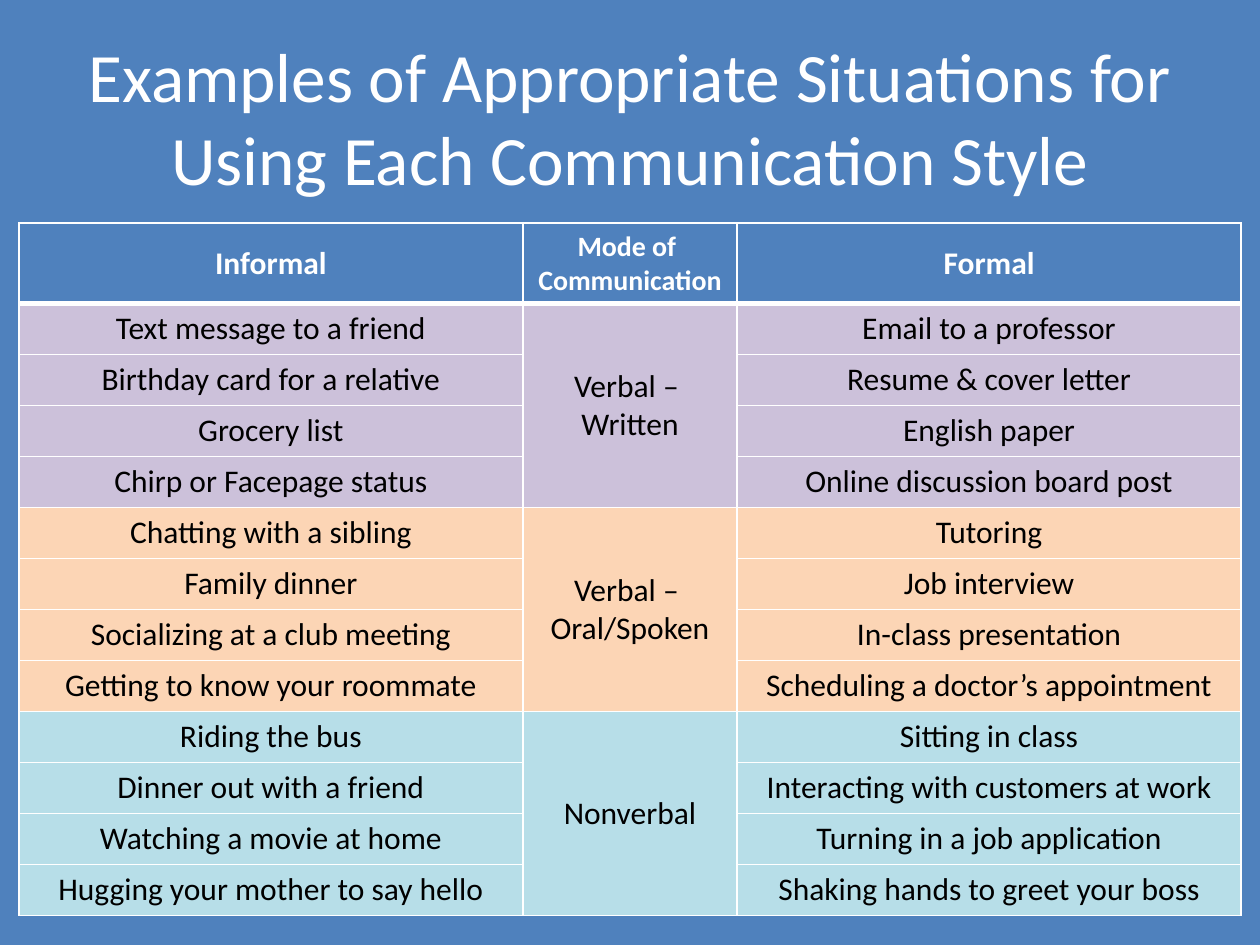
import copy
from dataclasses import dataclass

import pptx
import pptx.dml.color
import pptx.enum.text
import pptx.oxml
import pptx.oxml.ns
import pptx.util
from lxml import etree

RGBColor = pptx.dml.color.RGBColor
BLUE = RGBColor(0x4F, 0x81, 0xBD)
WHITE = RGBColor(0xFF, 0xFF, 0xFF)
BLACK = RGBColor(0x00, 0x00, 0x00)
LAVENDER = RGBColor(0xCC, 0xC1, 0xDA)
PEACH = RGBColor(0xFC, 0xD5, 0xB5)
AQUA = RGBColor(0xB7, 0xDE, 0xE8)

# Slide size and table grid, in inches
WIDTH, HEIGHT = 10, 7.5
COLUMNS = (4, 1.7, 4)
TABLE_TOP, TABLE_HEIGHT, HEADER_HEIGHT = 1.77, 5.5, 0.64
THIN, THICK = 1, 3


@dataclass
class TextStyle:
    size: float
    color: RGBColor
    bold: bool = False


@dataclass
class Mode:
    name: str
    fill: RGBColor
    examples: list[tuple[str, str]]


TITLE = "Examples of Appropriate Situations for Using Each Communication Style"
TITLE_STYLE = TextStyle(39.6, WHITE)
BODY_STYLE = TextStyle(18, BLACK)
HEADERS = [
    ("Informal", TextStyle(18, WHITE, True)),
    ("Mode of \vCommunication", TextStyle(16, WHITE, True)),
    ("Formal", TextStyle(18, WHITE, True)),
]
MODES = [
    Mode("Verbal – \vWritten", LAVENDER, [
        ("Text message to a friend", "Email to a professor"),
        ("Birthday card for a relative", "Resume & cover letter"),
        ("Grocery list", "English paper"),
        ("Chirp or Facepage status", "Online discussion board post"),
    ]),
    Mode("Verbal – \vOral/Spoken", PEACH, [
        ("Chatting with a sibling", "Tutoring"),
        ("Family dinner", "Job interview"),
        ("Socializing at a club meeting", "In-class presentation"),
        ("Getting to know your roommate", "Scheduling a doctor’s appointment"),
    ]),
    Mode("Nonverbal", AQUA, [
        ("Riding the bus", "Sitting in class"),
        ("Dinner out with a friend", "Interacting with customers at work"),
        ("Watching a movie at home", "Turning in a job application"),
        ("Hugging your mother to say hello", "Shaking hands to greet your boss"),
    ]),
]


def write_text(frame, text: str, style: TextStyle) -> None:
    """Write one centred paragraph, with its line breaks sized like its text."""
    para = frame.paragraphs[0]
    para.text = text
    para.alignment = pptx.enum.text.PP_ALIGN.CENTER
    formats = {"name": "Calibri", "size": pptx.util.Pt(style.size), "bold": style.bold}
    for span in para.runs:
        for key, value in formats.items():
            setattr(span.font, key, value)
        span.font.color.rgb = style.color
    for line_break in para._p.findall(pptx.oxml.ns.qn("a:br")):
        line_break.append(copy.deepcopy(para.runs[0]._r.rPr))


def set_borders(cell, top: float, bottom: float) -> None:
    """Draw white borders; the side borders are always thin."""
    properties = cell._tc.get_or_add_tcPr()
    for side, width in {"L": THIN, "R": THIN, "T": top, "B": bottom}.items():
        line = etree.SubElement(properties, pptx.oxml.ns.qn(f"a:ln{side}"),
                                w=str(pptx.util.Pt(width)))
        fill = etree.SubElement(line, pptx.oxml.ns.qn("a:solidFill"))
        etree.SubElement(fill, pptx.oxml.ns.qn("a:srgbClr"), val=str(WHITE))


def format_cell(cell, fill: RGBColor, top: float = THIN, bottom: float = THIN) -> None:
    set_borders(cell, top, bottom)
    cell.fill.solid()
    cell.fill.fore_color.rgb = fill
    cell.vertical_anchor = pptx.enum.text.MSO_ANCHOR.MIDDLE


def add_title(page) -> None:
    box = page.shapes.add_textbox(*map(pptx.util.Inches, (
        0.05 * WIDTH, 0.04 * HEIGHT, 0.9 * WIDTH, HEIGHT / 6)))
    box.text_frame.word_wrap = True
    box.text_frame.vertical_anchor = pptx.enum.text.MSO_ANCHOR.MIDDLE
    write_text(box.text_frame, TITLE, TITLE_STYLE)


def add_situations(page) -> None:
    row_count = sum(len(mode.examples) for mode in MODES)
    width = sum(COLUMNS)
    table = page.shapes.add_table(row_count + 1, len(COLUMNS), *map(
        pptx.util.Inches, ((WIDTH - width) / 2, TABLE_TOP, width, TABLE_HEIGHT))).table
    table.horz_banding = False
    for column, column_width in zip(table.columns, COLUMNS):
        column.width = pptx.util.Inches(column_width)
    row_height = (TABLE_HEIGHT - HEADER_HEIGHT) / row_count
    for index, row in enumerate(table.rows):
        row.height = pptx.util.Inches(row_height if index else HEADER_HEIGHT)

    # Header row
    for column, (text, style) in enumerate(HEADERS):
        cell = table.cell(0, column)
        format_cell(cell, BLUE, bottom=THICK)
        write_text(cell.text_frame, text, style)

    # One block of rows for each mode, with the mode merged down the middle
    first = 1
    for mode in MODES:
        last = first + len(mode.examples) - 1
        for row, (informal, formal) in enumerate(mode.examples, first):
            for column in range(len(COLUMNS)):
                format_cell(table.cell(row, column), mode.fill,
                            top=THICK if row == 1 else THIN)
            write_text(table.cell(row, 0).text_frame, informal, BODY_STYLE)
            write_text(table.cell(row, 2).text_frame, formal, BODY_STYLE)
        table.cell(first, 1).merge(table.cell(last, 1))
        write_text(table.cell(first, 1).text_frame, mode.name, BODY_STYLE)
        first = last + 1


def main() -> None:
    deck = pptx.Presentation()
    deck.slide_width = pptx.util.Inches(WIDTH)
    deck.slide_height = pptx.util.Inches(HEIGHT)
    page = deck.slides.add_slide(deck.slide_layouts[6])
    page.background.fill.solid()
    page.background.fill.fore_color.rgb = BLUE
    add_title(page)
    add_situations(page)
    deck.save("out.pptx")


if __name__ == "__main__":
    main()
